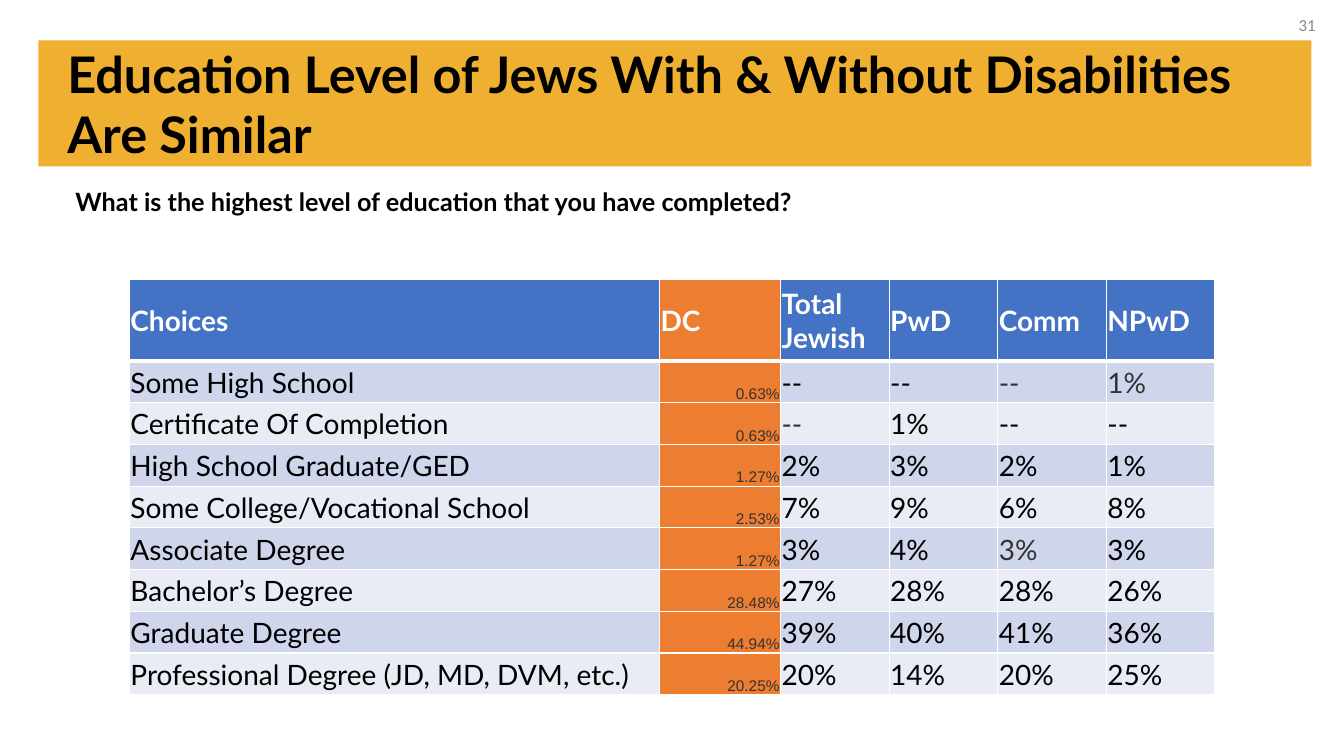
import pptx
import pptx.dml.color
import pptx.enum.shapes
import pptx.enum.text
import pptx.oxml
import pptx.oxml.ns
import pptx.util

Pt = pptx.util.Pt
RGB = pptx.dml.color.RGBColor
ALIGN = pptx.enum.text.PP_ALIGN
ANCHOR = pptx.enum.text.MSO_ANCHOR

BLACK = RGB(0x00, 0x00, 0x00)
WHITE = RGB(0xFF, 0xFF, 0xFF)
GOLD = RGB(0xEF, 0xAF, 0x30)
BLUE = RGB(0x44, 0x72, 0xC4)
ORANGE = RGB(0xED, 0x7D, 0x31)
BANDS = [RGB(0xCF, 0xD5, 0xEA), RGB(0xE9, 0xEB, 0xF5)]
DARK = RGB(0x33, 0x33, 0x33)
GREY = RGB(0x88, 0x88, 0x88)

TITLE = {"name": "Lato", "size": Pt(36), "bold": True}
ASK = {"name": "Lato", "size": Pt(18), "bold": True}
NUMBER = {"name": "Calibri", "size": Pt(12), "bold": False}
HEAD = {"name": "Lato", "size": Pt(20), "bold": True}
BODY = {"name": "Lato", "size": Pt(20), "bold": False}
SMALL = {"name": "Arial", "size": Pt(11), "bold": False}
INSET = {"margin_left": Pt(0.7), "margin_right": Pt(0.7),
         "margin_top": Pt(0.7), "margin_bottom": Pt(0)}

WIDTHS = [378.7, 86.4] + [77.6] * 4
HEIGHTS = [58.3] + [29.8] * 8
ROWS = [
    ["Choices", "DC", "Total Jewish", "PwD", "Comm", "NPwD"],
    ["Some High School", "0.63%", "--", "--", "--", "1%"],
    ["Certificate Of Completion", "0.63%", "--", "1%", "--", "--"],
    ["High School Graduate/GED", "1.27%", "2%", "3%", "2%", "1%"],
    ["Some College/Vocational School", "2.53%", "7%", "9%", "6%", "8%"],
    ["Associate Degree", "1.27%", "3%", "4%", "3%", "3%"],
    ["Bachelor’s Degree", "28.48%", "27%", "28%", "28%", "26%"],
    ["Graduate Degree", "44.94%", "39%", "40%", "41%", "36%"],
    ["Professional Degree (JD, MD, DVM, etc.)",
     "20.25%", "20%", "14%", "20%", "25%"],
]
DC = 1
MUTED = {(1, 4), (1, 5), (2, 2), (5, 4)}  # row, column of the dark grey values


def assign(item, values):
    for key, value in values.items():
        setattr(item, key, value)


def write(frame, text, style, color, align=ALIGN.LEFT):
    para = frame.paragraphs[0]
    para.alignment = align
    run = para.add_run()
    run.text = text
    assign(run.font, style)
    run.font.color.rgb = color


def add_bar(slide, box, color):
    rect = pptx.enum.shapes.MSO_SHAPE.RECTANGLE
    bar = slide.shapes.add_shape(rect, *map(Pt, box))
    bar.shadow.inherit = False
    bar.fill.solid()
    bar.fill.fore_color.rgb = color
    bar.line.fill.background()


def add_text(slide, box, text, style, color, align=ALIGN.LEFT,
             anchor=ANCHOR.MIDDLE):
    frame = slide.shapes.add_textbox(*map(Pt, box)).text_frame
    assign(frame, {"word_wrap": True, "vertical_anchor": anchor})
    write(frame, text, style, color, align)


def add_edges(cell, widths):
    """Draw white cell borders; widths maps a side (L, R, T, B) to points."""
    props = cell._tc.get_or_add_tcPr()
    space = pptx.oxml.ns.nsdecls("a")
    for side, width in widths.items():
        props.append(pptx.oxml.parse_xml(
            f'<a:ln{side} {space} w="{Pt(width)}"><a:solidFill>'
            f'<a:srgbClr val="{WHITE}"/></a:solidFill></a:ln{side}>'))


def fill_cell(cell, row, col):
    top = 3 if row == 1 else 1
    base = 3 if row == 0 else 1
    add_edges(cell, {"L": 1, "R": 1, "T": top, "B": base})
    style, color, align, anchor = BODY, BLACK, ALIGN.LEFT, ANCHOR.MIDDLE
    back = BANDS[(row - 1) % 2]
    if row == 0:
        style, color, back = HEAD, WHITE, BLUE
    elif col == DC:
        style, color, align, anchor = SMALL, DARK, ALIGN.RIGHT, ANCHOR.BOTTOM
    elif (row, col) in MUTED:
        color = DARK
    cell.fill.solid()
    cell.fill.fore_color.rgb = ORANGE if col == DC else back
    assign(cell, {**INSET, "vertical_anchor": anchor})
    write(cell.text_frame, ROWS[row][col], style, color, align)


def add_grid(slide, left, top):
    size = (left, top, sum(WIDTHS), sum(HEIGHTS))
    table = slide.shapes.add_table(
        len(ROWS), len(WIDTHS), *map(Pt, size)).table
    for col, width in zip(table.columns, WIDTHS):
        col.width = Pt(width)
    for row, height in zip(table.rows, HEIGHTS):
        row.height = Pt(height)
    for row in range(len(ROWS)):
        for col in range(len(WIDTHS)):
            fill_cell(table.cell(row, col), row, col)


def main():
    deck = pptx.Presentation()
    assign(deck, {"slide_width": Pt(960), "slide_height": Pt(540)})
    slide = deck.slides.add_slide(deck.slide_layouts[6])
    add_bar(slide, (27.4, 28.8, 909.4, 90), GOLD)
    add_text(slide, (41, 28.8, 897, 90),
             "Education Level of Jews With & Without Disabilities Are Similar",
             TITLE, BLACK)
    add_text(slide, (730.8, 3.6, 216, 28.8), "31", NUMBER, GREY, ALIGN.RIGHT)
    add_text(slide, (46.8, 129.6, 836.6, 29),
             "What is the highest level of education that you have completed?",
             ASK, BLACK, anchor=ANCHOR.TOP)
    add_grid(slide, 92.5, 199.6)
    deck.save("out.pptx")


if __name__ == "__main__":
    main()
